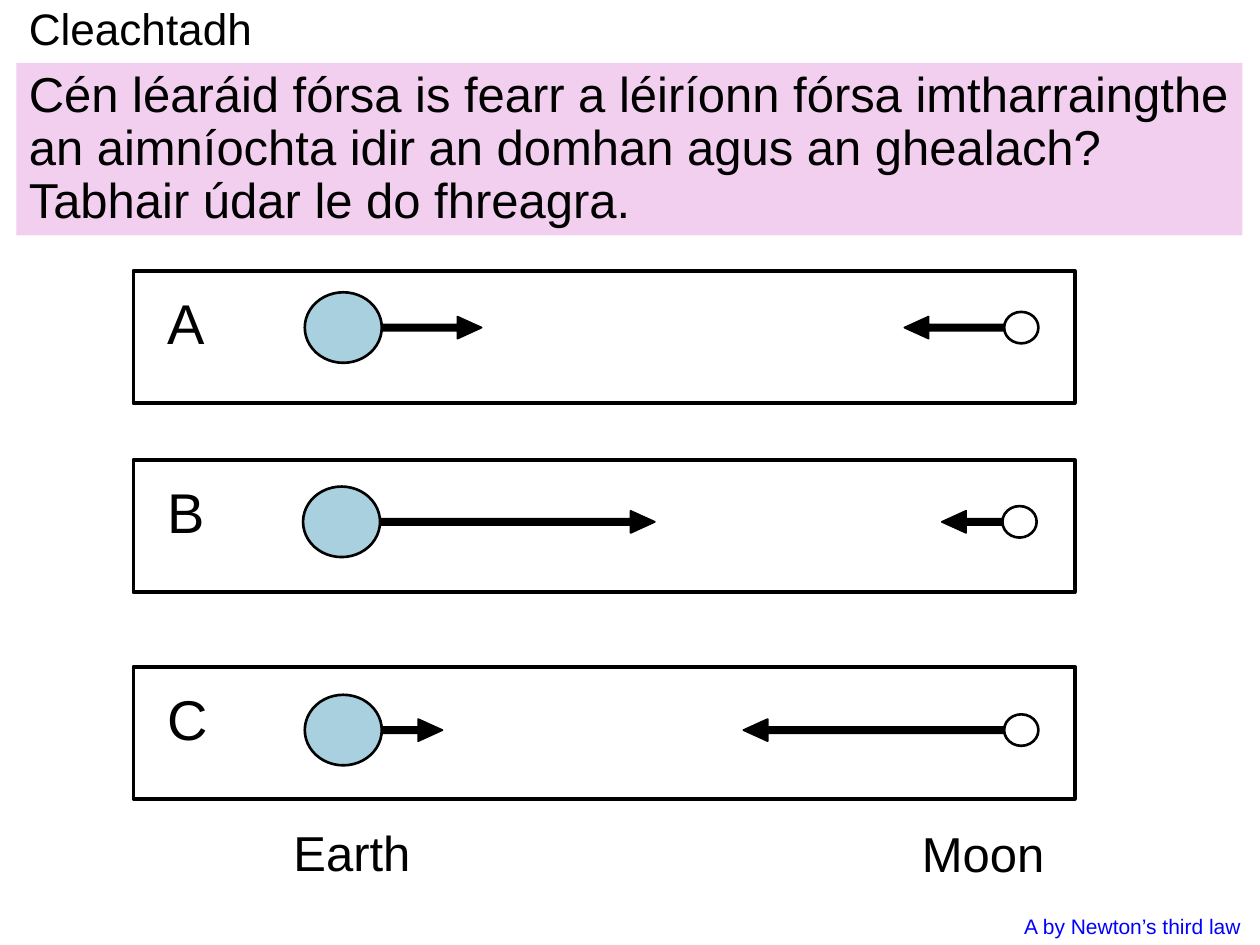
from pptx import Presentation
from pptx.dml.color import RGBColor as Color
from pptx.enum.shapes import MSO_SHAPE as Shape
from pptx.enum.text import MSO_ANCHOR as Anchor
from pptx.util import Pt

THEME = {
    "font": "Arial",
    "ink": "000000", "paper": "FFFFFF", "panel": "F2CFEE",
    "earth": "A9D0DF", "answer": "0000FF",
    "title": 25.2, "body": 28, "letter": 32, "note": 12,
}

TITLE = "Cleachtadh"
QUESTION = ("Cén léaráid fórsa is fearr a léiríonn fórsa imtharraingthe "
            "an aimníochta idir an domhan agus an ghealach? "
            "Tabhair údar le do fhreagra.")
CAPTIONS = [
    ("Earth", (160.6, 466.6, 82, 41), "body", "ink"),
    ("Moon", (519.8, 467.3, 86, 41), "body", "ink"),
    ("A by Newton’s third law", (578.2, 518.4, 139, 21.6), "note", "answer"),
]
OPTIONS = [
    {"letter": "A", "top": 154.8, "axis": 187.2, "shift": 0, "earth_force": 57, "moon_force": 57},
    {"letter": "B", "top": 262.8, "axis": 298.2, "shift": -1, "earth_force": 157, "moon_force": 34.6},
    {"letter": "C", "top": 380.9, "axis": 417.2, "shift": 0, "earth_force": 34.6, "moon_force": 149},
]

FRAME_LEFT, FRAME_WIDTH, FRAME_HEIGHT = 76.3, 537.8, 75.6
LETTER_LEFT, LETTER_DROP = 88.6, 6.5
EARTH_LEFT, EARTH_SIZE = 174.2, (44, 40.3)
MOON_LEFT, MOON_SIZE = 573.8, (19.6, 18)
ARROW_HEIGHT, ARROW_ADJUST = 12.6, (0.289, 1.098)

deck = Presentation()
deck.slide_width, deck.slide_height = Pt(720), Pt(540)
page = deck.slides.add_slide(deck.slide_layouts[6])


def place(kind, bounds, fill, line_width):
    shape = page.shapes.add_shape(kind, *map(Pt, bounds))
    shape.shadow.inherit = False
    shape.fill.solid()
    shape.fill.fore_color.rgb = Color.from_string(THEME[fill])
    shape.line.color.rgb = Color.from_string(THEME["ink"])
    shape.line.width = Pt(line_width)
    return shape


def write(text, bounds, size, color="ink", wrap=False, anchor=Anchor.TOP, **spacing):
    box = page.shapes.add_textbox(*map(Pt, bounds))
    frame = box.text_frame
    frame.word_wrap, frame.vertical_anchor = wrap, anchor
    para = frame.paragraphs[0]
    for name, value in spacing.items():
        setattr(para, name, value)
    span = para.add_run()
    span.text = text
    for name, value in {"name": THEME["font"], "size": Pt(THEME[size])}.items():
        setattr(span.font, name, value)
    span.font.color.rgb = Color.from_string(THEME[color])
    return box


def place_body(left, axis, size, fill):
    width, height = size
    place(Shape.OVAL, (left, axis - height / 2, width, height), fill, 1.5)


def place_force(left, axis, length, rotation):
    bounds = (left, axis - ARROW_HEIGHT / 2, length, ARROW_HEIGHT)
    arrow = place(Shape.RIGHT_ARROW, bounds, "ink", 1)
    arrow.rotation = rotation
    for index, value in enumerate(ARROW_ADJUST):
        arrow.adjustments[index] = value


write(TITLE, (9.4, 0, 520.6, 36), "title", wrap=True,
      anchor=Anchor.MIDDLE, line_spacing=0.9)
question = write(QUESTION, (9.4, 36, 700.6, 98.6), "body", wrap=True,
                 anchor=Anchor.MIDDLE, line_spacing=0.9)
question.fill.solid()
question.fill.fore_color.rgb = Color.from_string(THEME["panel"])

for option in OPTIONS:
    top, axis = option["top"], option["axis"]
    earth_left = EARTH_LEFT + option["shift"]
    moon_left = MOON_LEFT + option["shift"]
    place(Shape.RECTANGLE, (FRAME_LEFT, top, FRAME_WIDTH, FRAME_HEIGHT), "paper", 2.25)
    write(option["letter"], (LETTER_LEFT, top + LETTER_DROP, 37, 46),
          "letter", space_after=Pt(12))
    place_body(earth_left, axis, EARTH_SIZE, "earth")
    place_body(moon_left, axis, MOON_SIZE, "paper")
    place_force(earth_left + EARTH_SIZE[0], axis, option["earth_force"], 0)
    place_force(moon_left - option["moon_force"], axis, option["moon_force"], 180)

for text, bounds, size, color in CAPTIONS:
    write(text, bounds, size, color, space_after=Pt(12))

deck.save("out.pptx")
